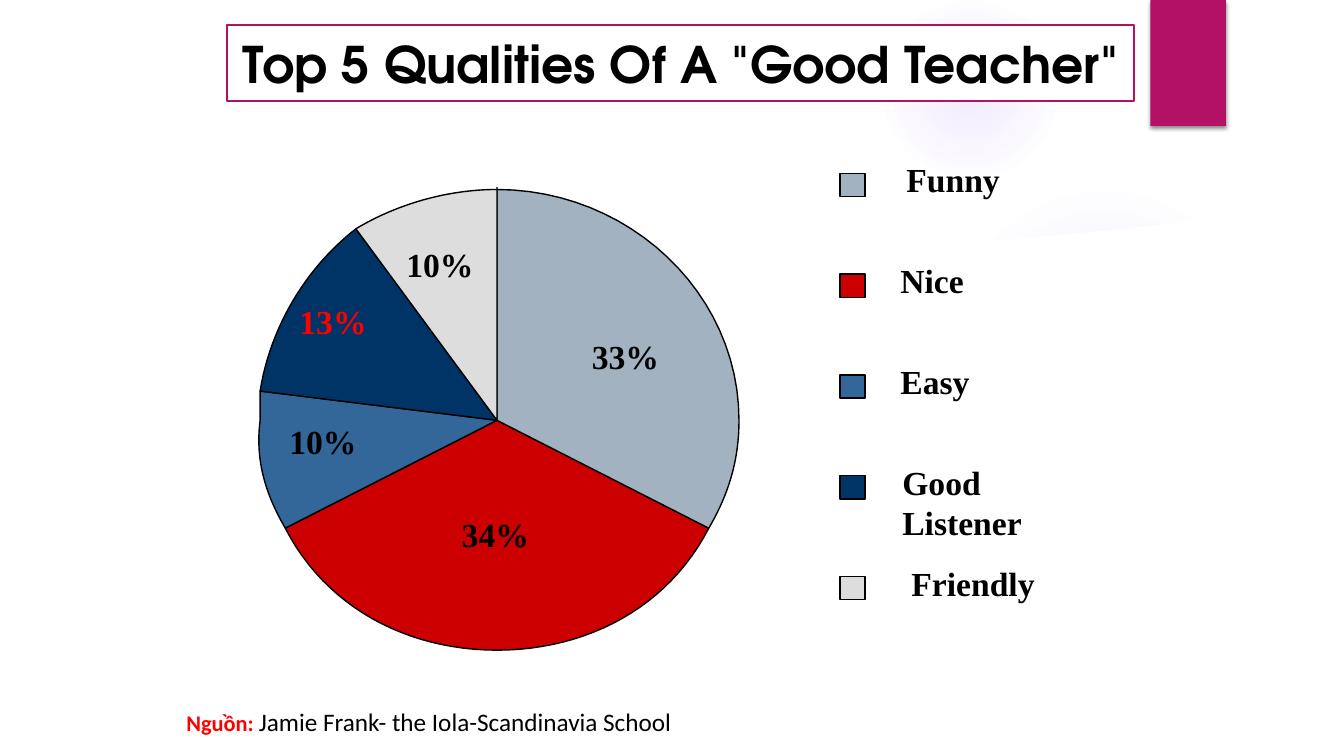
from pptx import Presentation
from pptx.dml.color import RGBColor as Rgb
from pptx.enum.shapes import MSO_SHAPE as Preset
from pptx.enum.text import MSO_ANCHOR as Anchor, PP_ALIGN as Align
from pptx.oxml import parse_xml
from pptx.oxml.ns import nsdecls
from pptx.util import Pt

PX = 9144
CURVE_STEPS = 24
SERIF = "Times New Roman"
COLORS = {
    "white": "FFFFFF", "black": "000000", "magenta": "B31166",
    "glow": "9B6BF2", "red text": "FF0000", "Funny": "A3B2C1",
    "Nice": "CC0000", "Easy": "336699", "Good Listener": "003366",
    "Friendly": "DDDDDD",
}

presentation = Presentation()
presentation.slide_width = 1333 * PX
presentation.slide_height = 750 * PX
slide = presentation.slides.add_slide(presentation.slide_layouts[6])
shapes = slide.shapes


def write(frame, runs, align=Align.LEFT, anchor=Anchor.TOP, wrap=False, inset=(0, 0)):
    frame.word_wrap = wrap
    frame.vertical_anchor = anchor
    frame.margin_left = frame.margin_right = inset[0] * PX
    frame.margin_top = frame.margin_bottom = inset[1] * PX
    paragraph = frame.paragraphs[0]
    paragraph.alignment = align
    for text, size, font_name, color, bold in runs:
        run = paragraph.add_run()
        run.text = text
        run.font.size = Pt(size)
        run.font.name = font_name
        run.font.bold = bold
        run.font.color.rgb = Rgb.from_string(COLORS[color])


def paint(shape, fill=None, line=None, line_width=1):
    shape.shadow.inherit = False
    if fill:
        shape.fill.solid()
        shape.fill.fore_color.rgb = Rgb.from_string(COLORS[fill])
    if line:
        shape.line.color.rgb = Rgb.from_string(COLORS[line])
        shape.line.width = Pt(line_width)
    else:
        shape.line.fill.background()


glows = [
    (941, 183, 308, [(0, 7), (36, 6), (69, 0)]),
    (875, 1, 175, [(0, 14), (36, 7), (73, 0)]),
]
for left, top, size, stops in glows:
    glow = shapes.add_shape(Preset.OVAL, left * PX, top * PX, size * PX, size * PX)
    paint(glow)
    stop_xml = "".join(
        f'<a:gs pos="{position * 1000}"><a:srgbClr val="{COLORS["glow"]}">'
        f'<a:alpha val="{alpha * 1000}"/></a:srgbClr></a:gs>'
        for position, alpha in stops
    )
    glow._element.spPr.insert(2, parse_xml(
        f'<a:gradFill {nsdecls("a")}><a:gsLst>{stop_xml}</a:gsLst><a:path path="circle">'
        '<a:fillToRect l="50000" t="50000" r="50000" b="50000"/></a:path></a:gradFill>'
    ))

panel_edge = [
    (50, 700), (1284, 700), (1284, 204), (1200, 217), (1116, 227), (1032, 235),
    (949, 241), (867, 245), (760, 247), (657, 248), (511, 244), (360, 236),
    (216, 224), (113, 212),
]
panel = shapes.build_freeform(50, 204, scale=PX)
panel.add_line_segments(panel_edge)
paint(panel.convert_to_shape(), "white")

ribbon = shapes.add_shape(Preset.RECTANGLE, 1141 * PX, 0, 75 * PX, 125 * PX)
paint(ribbon, "magenta")
ribbon._element.spPr.effectLst.append(parse_xml(
    f'<a:outerShdw {nsdecls("a")} blurRad="{Pt(3)}" dist="{Pt(2)}" dir="5400000" rotWithShape="0">'
    f'<a:srgbClr val="{COLORS["black"]}"><a:alpha val="45000"/></a:srgbClr></a:outerShdw>'
))

title = shapes.add_shape(Preset.RECTANGLE, 225 * PX, 25 * PX, 900 * PX, 75 * PX)
paint(title, "white", "magenta", 1.5)
write(title.text_frame, [('Top 5 Qualities Of A "Good Teacher"', 36, "TeX Gyre Adventor", "black", True)],
      align=Align.CENTER, anchor=Anchor.MIDDLE, wrap=True, inset=(10, 5))

legend = [
    ("Funny", 899, 94), ("Nice", 893, 63), ("Easy", 893, 69),
    ("Good Listener", 895, 200), ("Friendly", 904, 123),
]
for row, (quality, left, width) in enumerate(legend):
    top = 172 + 100 * row
    swatch = shapes.add_shape(Preset.RECTANGLE, 833 * PX, top * PX, 25 * PX, 23 * PX)
    paint(swatch, quality, "black")
    label = shapes.add_textbox(left * PX, (top - 14) * PX, width * PX, 40 * PX)
    write(label.text_frame, [(quality, 24, SERIF, "black", True)], wrap=" " in quality)

citation = shapes.add_textbox(175 * PX, 696 * PX, 833 * PX, 40 * PX)
write(citation.text_frame, [
    ("Nguồn: ", 16, "Calibri", "red text", True),
    ("Jamie Frank- the Iola-Scandinavia School", 18, "Calibri", "black", False),
], wrap=True, inset=(10, 5))

pie_center = (493, 417)
slices = [
    ("Nice", (283, 524), [((323, 602), (403, 645), (493, 645)),
                          ((583, 645), (663, 602), (703, 524))]),
    ("Funny", (703, 524), [((723, 490), (733, 456), (733, 417)),
                           ((733, 290), (623, 188), (493, 188)),
                           ((493, 183), (493, 188), (493, 188))]),
    ("Easy", (258, 388), [((258, 397), (258, 407), (258, 417)),
                          ((253, 456), (263, 490), (283, 524))]),
    ("Good Listener", (353, 227), [((303, 266), (268, 325), (258, 388))]),
    ("Friendly", (493, 188), [((443, 188), (393, 203), (353, 227))]),
]
for quality, start, curves in slices:
    outline = []
    corner = start
    for first, second, end in curves:
        for step in range(1, CURVE_STEPS + 1):
            t = step / CURVE_STEPS
            outline.append(tuple(
                PX * ((1 - t) ** 3 * a + 3 * t * (1 - t) ** 2 * b + 3 * t * t * (1 - t) * c + t ** 3 * d)
                for a, b, c, d in zip(corner, first, second, end)
            ))
        corner = end
    outline.append(tuple(PX * value for value in pie_center))
    pie_slice = shapes.build_freeform(start[0] * PX, start[1] * PX)
    pie_slice.add_line_segments(outline)
    paint(pie_slice.convert_to_shape(), quality, "black")

percentages = [
    ("13%", 297, 299, "red text"), ("10%", 403, 242, "black"), ("33%", 587, 333, "black"),
    ("10%", 287, 418, "black"), ("34%", 458, 510, "black"),
]
for text, left, top, color in percentages:
    percentage = shapes.add_textbox(left * PX, top * PX, 67 * PX, 40 * PX)
    write(percentage.text_frame, [(text, 24, SERIF, color, True)])

presentation.save("out.pptx")
